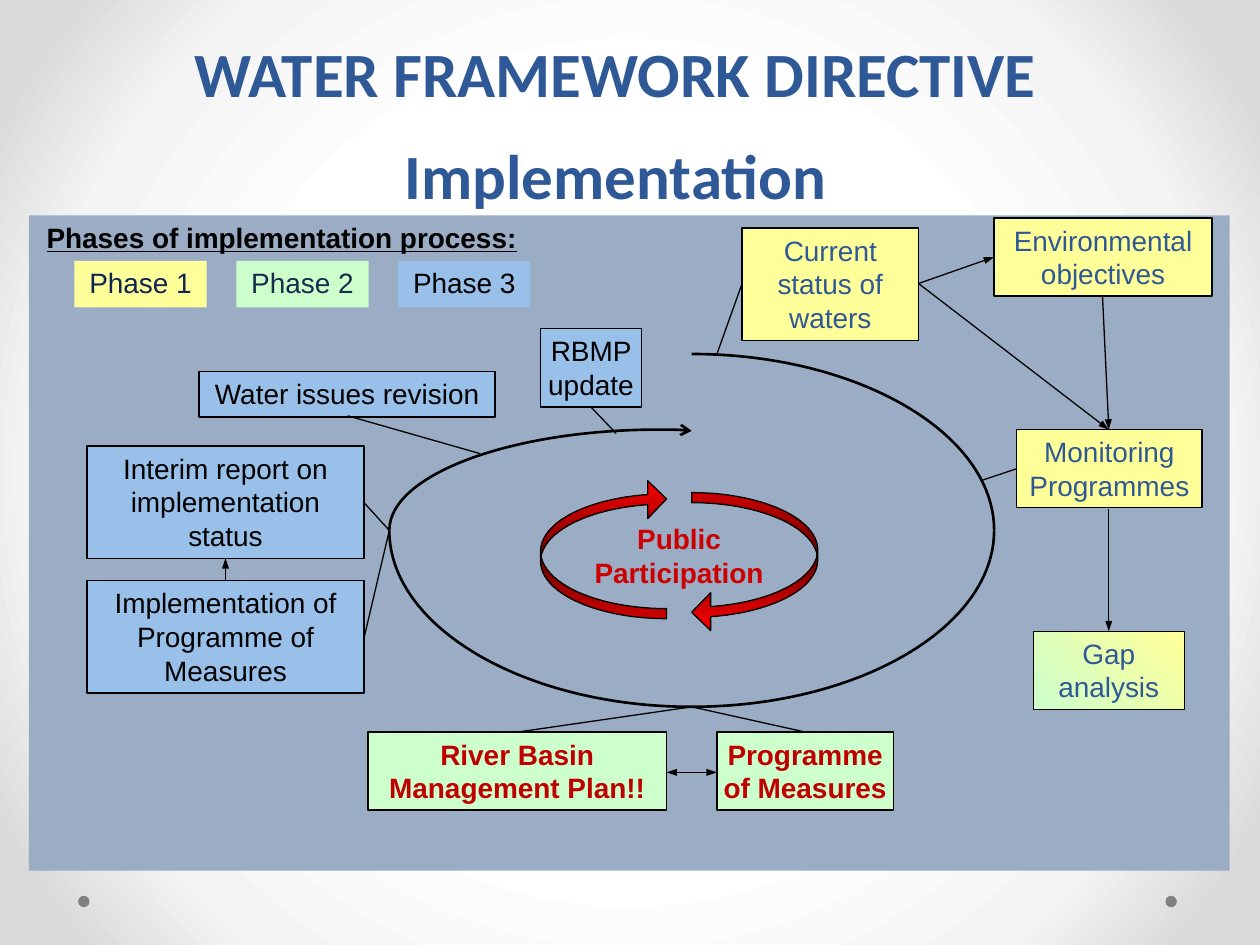
from dataclasses import dataclass
from typing import Any, Optional

import lxml.etree as etree
import pptx
import pptx.dml.color
import pptx.enum.shapes
import pptx.enum.text
import pptx.oxml.ns
import pptx.util

Inches = pptx.util.Inches
Pt = pptx.util.Pt
RGB = pptx.dml.color.RGBColor
SHAPE = pptx.enum.shapes.MSO_SHAPE
ALIGN = pptx.enum.text.PP_ALIGN
ANCHOR = pptx.enum.text.MSO_ANCHOR
qn = pptx.oxml.ns.qn

BLACK = RGB(0, 0, 0)
NAVY = RGB(0x2F, 0x58, 0x97)
DEEP_BLUE = RGB(0x10, 0x24, 0x55)
INK = RGB(0x18, 0x2C, 0x4B)
CRIMSON = RGB(0xC0, 0, 0)
SCARLET = RGB(0xCC, 0, 0)
RED = RGB(0xFF, 0, 0)
MAROON = RGB(0x76, 0, 0)
YELLOW = RGB(0xFF, 0xFF, 0x99)
GREEN = RGB(0xCC, 0xFF, 0xCC)
BLUE = RGB(0x99, 0xCC, 0xFF)
SLATE = RGB(0x9B, 0xAD, 0xC4)
GREY = RGB(0x80, 0x80, 0x80)
WHITE = RGB(0xFF, 0xFF, 0xFF)
PALE = RGB(0xF4, 0xF4, 0xF4)
SILVER = RGB(0xDA, 0xDA, 0xDA)

LABEL = {"name": "Arial", "size": Pt(16), "bold": False}
STRONG = {**LABEL, "bold": True}
HEADING = {**STRONG, "underline": True}
TITLE = {"name": "Calibri", "size": Pt(36), "bold": True}
LINE_WIDTH = Pt(0.75)
PAD = 0.04


@dataclass
class Box:
    text: str
    x: float
    y: float
    w: float
    h: float
    fill: RGB
    color: RGB
    font: dict[str, Any]
    outlined: bool = True


@dataclass
class Link:
    x1: float
    y1: float
    x2: float
    y2: float
    head: bool = False
    tail: bool = False


@dataclass
class Arc:
    cx: float
    rx: float
    ry: float
    lead: tuple = ()


BOXES = [
    Box("River Basin Management Plan!!", 2.92, 5.81, 2.37, 0.62, GREEN, CRIMSON, STRONG),
    Box("Environmental objectives", 7.89, 1.73, 1.73, 0.62, YELLOW, NAVY, LABEL),
    Box("Gap analysis", 8.2, 5.01, 1.2, 0.62, GREEN, NAVY, LABEL),
    Box("Programme of Measures", 5.69, 5.81, 1.4, 0.62, GREEN, CRIMSON, STRONG),
    Box("Current status of waters", 5.89, 1.81, 1.4, 0.89, YELLOW, NAVY, LABEL),
    Box("RBMP update", 4.29, 2.61, 0.8, 0.62, BLUE, BLACK, LABEL),
    Box("Monitoring Programmes", 8.07, 3.41, 1.47, 0.62, YELLOW, NAVY, LABEL),
    Box("Interim report on implementation status", 0.69, 3.54, 2.2, 0.89, BLUE, BLACK, LABEL),
    Box("Water issues revision", 1.58, 2.95, 2.35, 0.36, BLUE, BLACK, LABEL),
    Box("Implementation of Programme of Measures", 0.69, 4.61, 2.2, 0.89, BLUE, BLACK, LABEL),
]
PHASES = [(YELLOW, DEEP_BLUE), (GREEN, INK), (BLUE, BLACK)]
LINKS = [
    Link(5.69, 6.13, 5.29, 6.13, head=True, tail=True),
    Link(4.11, 5.81, 5.49, 5.61),
    Link(5.49, 5.61, 6.39, 5.81),
    Link(7.8, 3.81, 8.07, 3.72),
    Link(5.69, 2.81, 5.89, 2.25),
    Link(7.29, 2.25, 7.89, 2.04, tail=True),
    Link(8.75, 2.35, 8.8, 3.41, tail=True),
    Link(8.8, 4.04, 8.8, 5.01, tail=True),
    Link(7.29, 2.25, 8.8, 3.41, tail=True),
    Link(3.81, 3.6, 2.76, 3.3),
    Link(4.89, 3.44, 4.69, 3.23),
    Link(3.09, 4.21, 2.89, 3.99),
    Link(3.09, 4.21, 2.89, 5.06),
    Link(1.79, 4.61, 1.79, 4.43, tail=True),
]
SPIRAL_Y = 4.21
KAPPA = 0.55
ARCS = [Arc(5.49, rx, ry) for rx, ry in ((2.4, -1.4), (2.4, 1.4), (-2.4, 1.4))]
ARCS.append(Arc(5.23, -2.14, -0.8, lead=((5.49, 3.42), (5.4, 3.41), (5.32, 3.41))))


def set_gradient(parent: Any, stops: list[tuple[int, RGB]], angle: Optional[int] = None) -> None:
    grad = etree.Element(qn("a:gradFill"), rotWithShape="1")
    gs_lst = etree.SubElement(grad, qn("a:gsLst"))
    for pos, color in stops:
        gs = etree.SubElement(gs_lst, qn("a:gs"), pos=str(pos * 1000))
        etree.SubElement(gs, qn("a:srgbClr"), val=str(color))
    if angle is None:
        radial = etree.SubElement(grad, qn("a:path"), path="circle")
        etree.SubElement(radial, qn("a:fillToRect"), {k: "50000" for k in "ltrb"})
    else:
        etree.SubElement(grad, qn("a:lin"), ang=str(angle * 60000), scaled="1")
    parent.replace(parent.find(qn("a:solidFill")), grad)


def set_arrow(line: Any, end: str, kind: str, width: str = "med") -> None:
    ln = line._get_or_add_ln()
    etree.SubElement(ln, qn(f"a:{end}End"), type=kind, w=width, len="med")


def set_outline(line: Any, width: Pt = LINE_WIDTH) -> None:
    line.color.rgb = BLACK
    line.width = width


def add_preset(s: Any, kind: Any, x: float, y: float, w: float, h: float, fill: RGB) -> Any:
    sp = s.shapes.add_shape(kind, Inches(x), Inches(y), Inches(w), Inches(h))
    sp.shadow.inherit = False
    sp.fill.solid()
    sp.fill.fore_color.rgb = fill
    sp.line.fill.background()
    return sp


def write(sp: Any, lines: list[str], font: dict[str, Any], color: RGB,
          align: Any = ALIGN.CENTER, margins: tuple = (PAD,) * 4,
          anchor: Any = ANCHOR.TOP, spacing: Optional[Pt] = None) -> None:
    tf = sp.text_frame
    tf.word_wrap = True
    tf.vertical_anchor = anchor
    for side, margin in zip(("left", "top", "right", "bottom"), margins):
        setattr(tf, f"margin_{side}", Inches(margin))
    for i, line in enumerate(lines):
        p = tf.add_paragraph() if i else tf.paragraphs[0]
        p.alignment = align
        p.line_spacing = spacing
        r = p.add_run()
        r.text = line
        for key, value in font.items():
            setattr(r.font, key, value)
        r.font.color.rgb = color


def add_text(s: Any, x: float, y: float, w: float, h: float, *args: Any, **options: Any) -> None:
    write(s.shapes.add_textbox(Inches(x), Inches(y), Inches(w), Inches(h)), *args, **options)


def add_box(s: Any, box: Box) -> Any:
    sp = add_preset(s, SHAPE.RECTANGLE, box.x, box.y, box.w, box.h, box.fill)
    if box.fill == BLUE:
        clr = sp._element.spPr.find(qn("a:solidFill")).find(qn("a:srgbClr"))
        etree.SubElement(clr, qn("a:alpha"), val="63000")
    if box.outlined:
        set_outline(sp.line)
    write(sp, [box.text], box.font, box.color)
    return sp


def add_arc(s: Any, arc: Arc) -> None:
    steps = ((0, 1), (KAPPA, 1), (1, KAPPA), (1, 0))
    quarter = [(arc.cx + arc.rx * u, SPIRAL_Y + arc.ry * v) for u, v in steps]
    points = [(Inches(x), Inches(y)) for x, y in (*arc.lead, *quarter)]
    builder = s.shapes.build_freeform(*points[0])
    builder.add_line_segments(points[1:], close=False)
    sp = builder.convert_to_shape()
    segments = list(sp._element.iter(qn("a:lnTo")))
    for i in range(0, len(segments), 3):
        curve = etree.Element(qn("a:cubicBezTo"))
        segments[i].addprevious(curve)
        for segment in segments[i:i + 3]:
            curve.append(segment[0])
            segment.getparent().remove(segment)
    sp.shadow.inherit = False
    sp.fill.background()
    set_outline(sp.line, Pt(1.5))
    if arc.lead:
        set_arrow(sp.line, "head", "arrow")


def add_link(s: Any, link: Link) -> None:
    cx = s.shapes.add_connector(pptx.enum.shapes.MSO_CONNECTOR.STRAIGHT,
                                *map(Inches, (link.x1, link.y1, link.x2, link.y2)))
    set_outline(cx.line)
    for end in ("head", "tail"):
        if getattr(link, end):
            set_arrow(cx.line, end, "triangle", "sm")
    etree.SubElement(cx._element.spPr, qn("a:effectLst"))


def main() -> None:
    prs = pptx.Presentation()
    prs.slide_width, prs.slide_height = Inches(10), Inches(7.5)
    s = prs.slides.add_slide(prs.slide_layouts[6])
    s.background.fill.solid()
    set_gradient(s._element.find(".//" + qn("p:bgPr")), [(50, WHITE), (76, PALE), (92, SILVER)])
    for x in (9.25, 0.62):
        add_preset(s, SHAPE.OVAL, x, 7.11, 0.09, 0.09, GREY)
    add_preset(s, SHAPE.RECTANGLE, 0.23, 1.71, 9.53, 5.2, SLATE)
    add_text(s, 4.49, 4.09, 1.8, 0.64, ["Public Participation"], STRONG, SCARLET,
             margins=(0.1, 0.05, 0.1, 0.05))
    for x, y, turn in ((5.49, 3.91, 0), (4.29, 3.81, 180)):
        sp = add_preset(s, SHAPE.CURVED_LEFT_ARROW, x, y, 1, 1.1, RED)
        for i, value in enumerate((0.08, 0.3, 0.15)):
            sp.adjustments[i] = value
        sp.rotation = turn
        set_gradient(sp._element.spPr, [(0, RED), (50, MAROON), (100, RED)], 90)
        set_outline(sp.line)
    for arc in ARCS:
        add_arc(s, arc)
    for box in BOXES:
        sp = add_box(s, box)
        if box.text == "Gap analysis":
            set_gradient(sp._element.spPr, [(0, GREEN), (100, YELLOW)], 315)
    add_text(s, 0.33, 1.71, 4.4, 0.35, ["Phases of implementation process:"], HEADING, BLACK,
             align=ALIGN.LEFT)
    for i, (fill, color) in enumerate(PHASES):
        add_box(s, Box(f"Phase {i + 1}", 0.59 + 1.285 * i, 2.07, 1.05, 0.37, fill, color, LABEL, False))
    for link in LINKS:
        add_link(s, link)
    add_text(s, 0.59, 0.24, 8.59, 1.44, ["WATER FRAMEWORK DIRECTIVE", "Implementation"], TITLE, NAVY,
             margins=(0, 0.05, 0, 0), anchor=ANCHOR.BOTTOM, spacing=Pt(58))
    prs.save("out.pptx")


if __name__ == "__main__":
    main()
